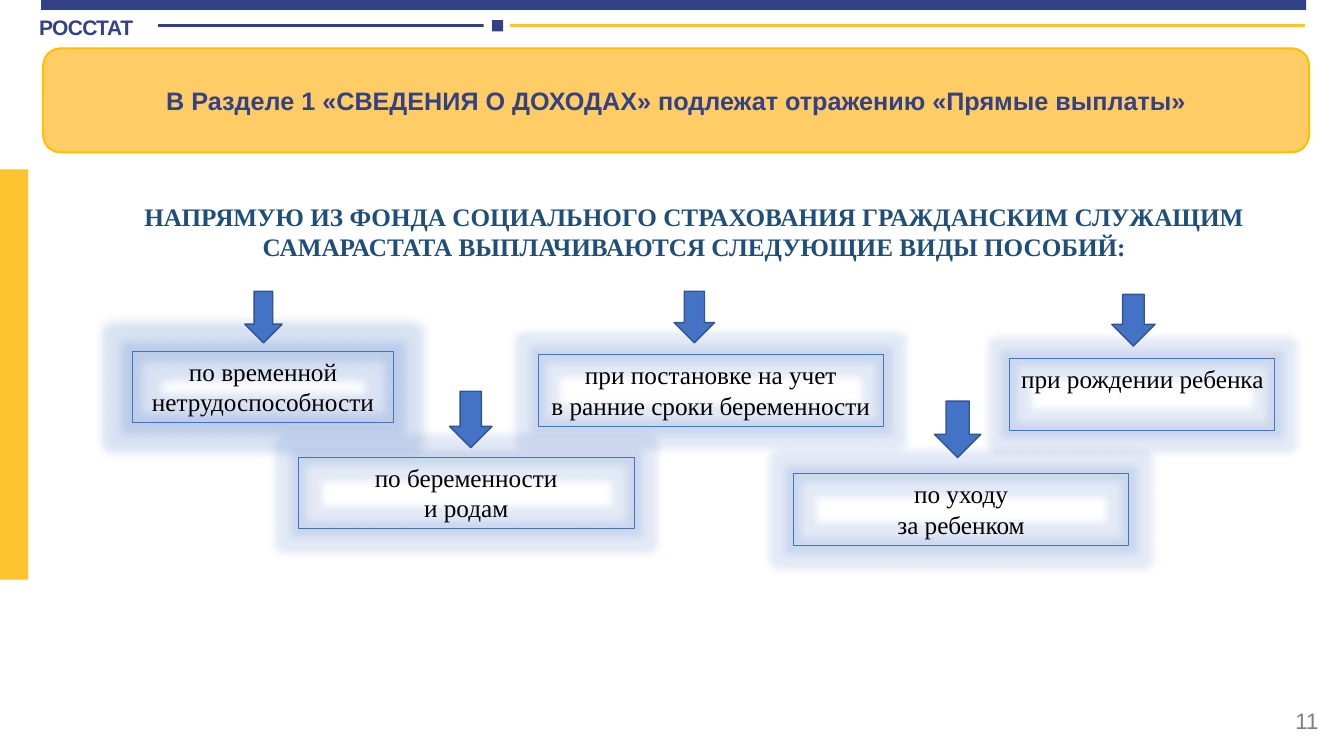
from dataclasses import dataclass

import lxml.etree
import pptx
import pptx.dml.color
import pptx.enum.shapes
import pptx.enum.text
import pptx.oxml.ns
import pptx.util

Cm = pptx.util.Cm
Pt = pptx.util.Pt
RGBColor = pptx.dml.color.RGBColor
SHAPE = pptx.enum.shapes.MSO_SHAPE
ALIGN = pptx.enum.text.PP_ALIGN
ANCHOR = pptx.enum.text.MSO_ANCHOR
qn = pptx.oxml.ns.qn

NAVY = RGBColor(0x33, 0x42, 0x86)
YELLOW = RGBColor(0xFF, 0xC3, 0x2E)
PEACH = RGBColor(0xFF, 0xCC, 0x66)
GOLD = RGBColor(0xFF, 0xC0, 0x00)
BLUE = RGBColor(0x44, 0x72, 0xC4)
DARK_BLUE = RGBColor(0x32, 0x54, 0x91)
HEADING = RGBColor(0x1F, 0x4E, 0x79)
GRAY = RGBColor(0x80, 0x80, 0x80)
WHITE = RGBColor(0xFF, 0xFF, 0xFF)
BLACK = RGBColor(0x00, 0x00, 0x00)


@dataclass
class Area:
    """Left, top, width and height in centimetres."""
    x: float
    y: float
    w: float
    h: float

    def emu(self) -> list[int]:
        return [Cm(v) for v in (self.x, self.y, self.w, self.h)]


@dataclass
class Style:
    size: float
    font: str
    color: RGBColor
    bold: bool = False
    align: ALIGN = ALIGN.CENTER


@dataclass
class Benefit:
    text: str
    box: Area
    arrow: Area
    wrap: bool = True
    glow_pt: float = 11
    glow_alpha: int = 15


BENEFIT_STYLE = Style(18, "Times New Roman", BLACK)
BENEFITS = [
    Benefit("по временной нетрудоспособности", Area(3.33, 8.86, 6.6, 1.8),
            Area(6.17, 7.34, 0.94, 1.3), glow_pt=14, glow_alpha=20),
    Benefit("по беременности\nи родам", Area(7.52, 11.53, 8.46, 1.8),
            Area(11.33, 9.86, 1.07, 1.42)),
    Benefit("при рождении ребенка", Area(25.45, 9.04, 6.68, 1.8),
            Area(28.02, 7.42, 1.09, 1.3), wrap=False),
    Benefit("по уходу\nза ребенком", Area(19.99, 11.94, 8.46, 1.8),
            Area(23.55, 10.11, 1.17, 1.42)),
    Benefit("при постановке на учет\nв ранние сроки беременности",
            Area(13.56, 8.94, 8.71, 1.8), Area(16.99, 7.34, 1.02, 1.3)),
]


def add_shape(slide, kind: SHAPE, area: Area, fill: RGBColor | None = None,
              line: RGBColor | None = None, line_pt: float = 1):
    sp = slide.shapes.add_shape(kind, *area.emu())
    sp.shadow.inherit = False
    if fill is None:
        sp.fill.background()
    else:
        sp.fill.solid()
        sp.fill.fore_color.rgb = fill
    if line is None:
        sp.line.fill.background()
    else:
        sp.line.color.rgb = line
        sp.line.width = Pt(line_pt)
    return sp


def write(sp, text: str, style: Style, anchor: ANCHOR = ANCHOR.TOP, wrap: bool = True):
    tf = sp.text_frame
    tf.word_wrap = wrap
    tf.vertical_anchor = anchor
    p = tf.paragraphs[0]
    p.text = text
    p.alignment = style.align
    p.font.size = Pt(style.size)
    p.font.name = style.font
    p.font.bold = style.bold
    p.font.color.rgb = style.color
    return p


def add_rule(slide, x1: float, x2: float, y: float, color: RGBColor) -> None:
    cn = slide.shapes.add_connector(
        pptx.enum.shapes.MSO_CONNECTOR.STRAIGHT, Cm(x1), Cm(y), Cm(x2), Cm(y))
    cn.line.color.rgb = color
    cn.line.width = Pt(2)
    lxml.etree.SubElement(cn.element.spPr, qn("a:effectLst"))


def add_glow(sp, radius_pt: float, alpha: int) -> None:
    effects = sp.element.spPr.find(qn("a:effectLst"))
    glow = lxml.etree.SubElement(effects, qn("a:glow"), rad=str(int(Pt(radius_pt))))
    color = lxml.etree.SubElement(glow, qn("a:srgbClr"), val=str(BLUE))
    lxml.etree.SubElement(color, qn("a:alpha"), val=str(alpha * 1000))


def add_header(slide) -> None:
    # Agency label
    label = slide.shapes.add_textbox(*Area(0.99, 0.33, 2.92, 0.81).emu())
    p = write(label, "РОССТАТ", Style(15, "Arial", NAVY, True, ALIGN.LEFT))
    p.space_before = Pt(1)
    p.runs[0].font._element.set("spc", "-50")
    tf = label.text_frame
    tf.margin_left = tf.margin_right = tf.margin_bottom = 0
    tf.margin_top = Cm(0.03)

    # Top and side bars
    add_shape(slide, SHAPE.RECTANGLE, Area(1.04, 0, 31.88, 0.25), NAVY)
    add_shape(slide, SHAPE.RECTANGLE, Area(0, 4.27, 0.71, 10.34), YELLOW)

    # Two-colour rule with a square in the gap
    add_rule(slide, 3.99, 12.4, 0.65, NAVY)
    add_rule(slide, 12.7, 32.89, 0.65, YELLOW)
    add_shape(slide, SHAPE.RECTANGLE, Area(12.19, 0.51, 0.66, 0.28), WHITE)
    add_shape(slide, SHAPE.RECTANGLE, Area(12.4, 0.51, 0.28, 0.28), NAVY)


def main() -> None:
    prs = pptx.Presentation()
    prs.slide_width, prs.slide_height = Cm(33.87), Cm(19.05)
    slide = prs.slides.add_slide(prs.slide_layouts[6])

    add_header(slide)

    # Slide number
    number = slide.shapes.add_textbox(*Area(25.86, 17.65, 7.62, 1.02).emu())
    write(number, "11", Style(16, "Arial", GRAY, align=ALIGN.RIGHT), ANCHOR.MIDDLE)

    # Title banner and heading
    banner = add_shape(slide, SHAPE.ROUNDED_RECTANGLE, Area(1.09, 1.22, 31.9, 2.62),
                       PEACH, GOLD, 1.5)
    write(banner, "В Разделе 1 «СВЕДЕНИЯ О ДОХОДАХ» подлежат отражению «Прямые выплаты»",
          Style(18, "Arial", NAVY, True), ANCHOR.MIDDLE)
    heading = add_shape(slide, SHAPE.RECTANGLE, Area(1.6, 4.95, 31.8, 1.8), WHITE, WHITE)
    write(heading, "НАПРЯМУЮ ИЗ ФОНДА СОЦИАЛЬНОГО СТРАХОВАНИЯ ГРАЖДАНСКИМ СЛУЖАЩИМ "
                   "САМАРАСТАТА ВЫПЛАЧИВАЮТСЯ СЛЕДУЮЩИЕ ВИДЫ ПОСОБИЙ:",
          Style(18, "Times New Roman", HEADING, True))

    # Benefit boxes, then the arrows above them
    for b in BENEFITS:
        box = add_shape(slide, SHAPE.RECTANGLE, b.box, line=BLUE, line_pt=0.75)
        add_glow(box, b.glow_pt, b.glow_alpha)
        write(box, b.text, BENEFIT_STYLE, wrap=b.wrap)
    for b in BENEFITS:
        add_shape(slide, SHAPE.DOWN_ARROW, b.arrow, BLUE, DARK_BLUE)

    prs.save("out.pptx")


if __name__ == "__main__":
    main()
